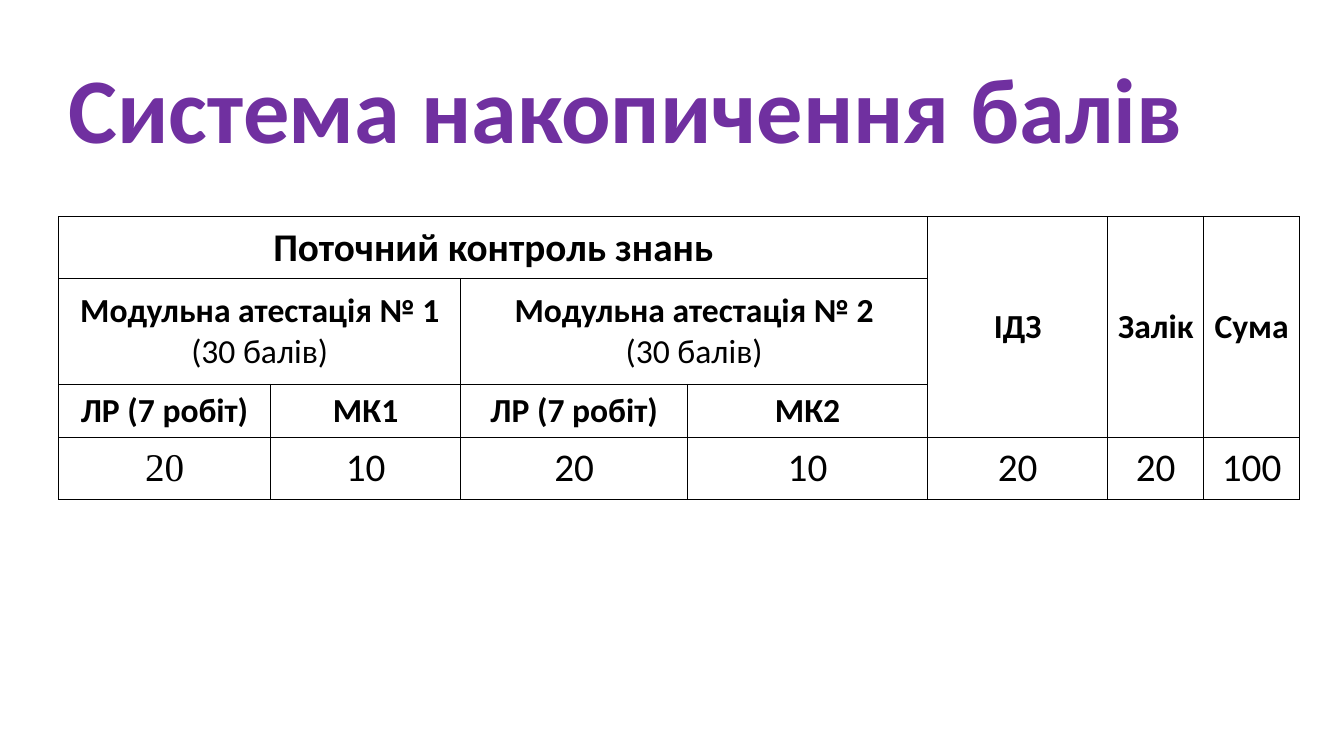
from dataclasses import dataclass

from lxml.etree import SubElement
from pptx import Presentation
from pptx.dml.color import RGBColor
from pptx.enum.text import MSO_ANCHOR as Anchor, PP_ALIGN as Align
from pptx.oxml.ns import qn
from pptx.util import Pt


@dataclass(frozen=True)
class Theme:
    font: str = "Calibri"
    serif: str = "Times New Roman"
    purple: str = "7030A0"
    black: str = "000000"
    title: int = 66
    large: int = 28
    medium: int = 24


theme = Theme()


def style(para, size, bold, color=theme.black, font=theme.font):
    for span in para.runs:
        span.font.name = font
        span.font.size = Pt(size)
        span.font.bold = bold
        span.font.color.rgb = RGBColor.from_string(color)


def add_borders(cell):
    properties = cell._tc.get_or_add_tcPr()
    for side in ("lnL", "lnR", "lnT", "lnB"):
        line = SubElement(properties, qn(f"a:{side}"), w=str(Pt(1)))
        fill = SubElement(line, qn("a:solidFill"))
        SubElement(fill, qn("a:srgbClr"), val=theme.black)


deck = Presentation()
deck.slide_width, deck.slide_height = Pt(960), Pt(540)
page = deck.slides.add_slide(deck.slide_layouts[6])

# Title
box = page.shapes.add_textbox(Pt(42), Pt(28.8), Pt(852), Pt(104.4))
frame = box.text_frame
frame.word_wrap = True
frame.vertical_anchor = Anchor.MIDDLE
frame.text = "Система накопичення балів"
frame.paragraphs[0].line_spacing = 0.9
style(frame.paragraphs[0], theme.title, True, theme.purple)

# Score table
column_widths = [151.2, 136, 162, 171.4, 128.8, 68.5, 68.5]
row_heights = [44.2, 75.6, 38, 44.2]
grid = page.shapes.add_table(
    len(row_heights), len(column_widths), Pt(42), Pt(154.8),
    Pt(sum(column_widths)), Pt(sum(row_heights)),
)
table = grid.table
table.first_row = table.horz_banding = False
for column, width in zip(table.columns, column_widths):
    column.width = Pt(width)
for row, height in zip(table.rows, row_heights):
    row.height = Pt(height)

for cell in table.iter_cells():
    add_borders(cell)
    cell.fill.background()
    cell.vertical_anchor = Anchor.MIDDLE
    cell.margin_left = cell.margin_right = Pt(5)
    cell.margin_top = cell.margin_bottom = 0

# Row, column, last row, last column, text, size
headings = [
    (0, 0, 0, 3, "Поточний контроль знань", theme.large),
    (0, 4, 2, 4, "ІДЗ", theme.medium),
    (0, 5, 2, 5, "Залік", theme.medium),
    (0, 6, 2, 6, "Сума", theme.medium),
    (1, 0, 1, 1, "Модульна атестація № 1\n(30 балів)", theme.medium),
    (1, 2, 1, 3, "Модульна атестація № 2\n(30 балів)", theme.medium),
]
for top, left, bottom, right, text, size in headings:
    cell = table.cell(top, left)
    cell.merge(table.cell(bottom, right))
    cell.text = text
    for index, para in enumerate(cell.text_frame.paragraphs):
        para.alignment = Align.CENTER
        style(para, size, bold=index == 0)

activities = ["ЛР (7 робіт)", "МК1", "ЛР (7 робіт)", "МК2"]
scores = ["20", "10", "20", "10", "20", "20", "100"]
for row, texts, size, bold in (
    (2, activities, theme.medium, True),
    (3, scores, theme.large, False),
):
    for column, text in enumerate(texts):
        cell = table.cell(row, column)
        cell.text = text
        para = cell.text_frame.paragraphs[0]
        para.alignment = Align.CENTER
        style(para, size, bold)

table.cell(3, 0).text_frame.paragraphs[0].runs[0].font.name = theme.serif

deck.save("out.pptx")
